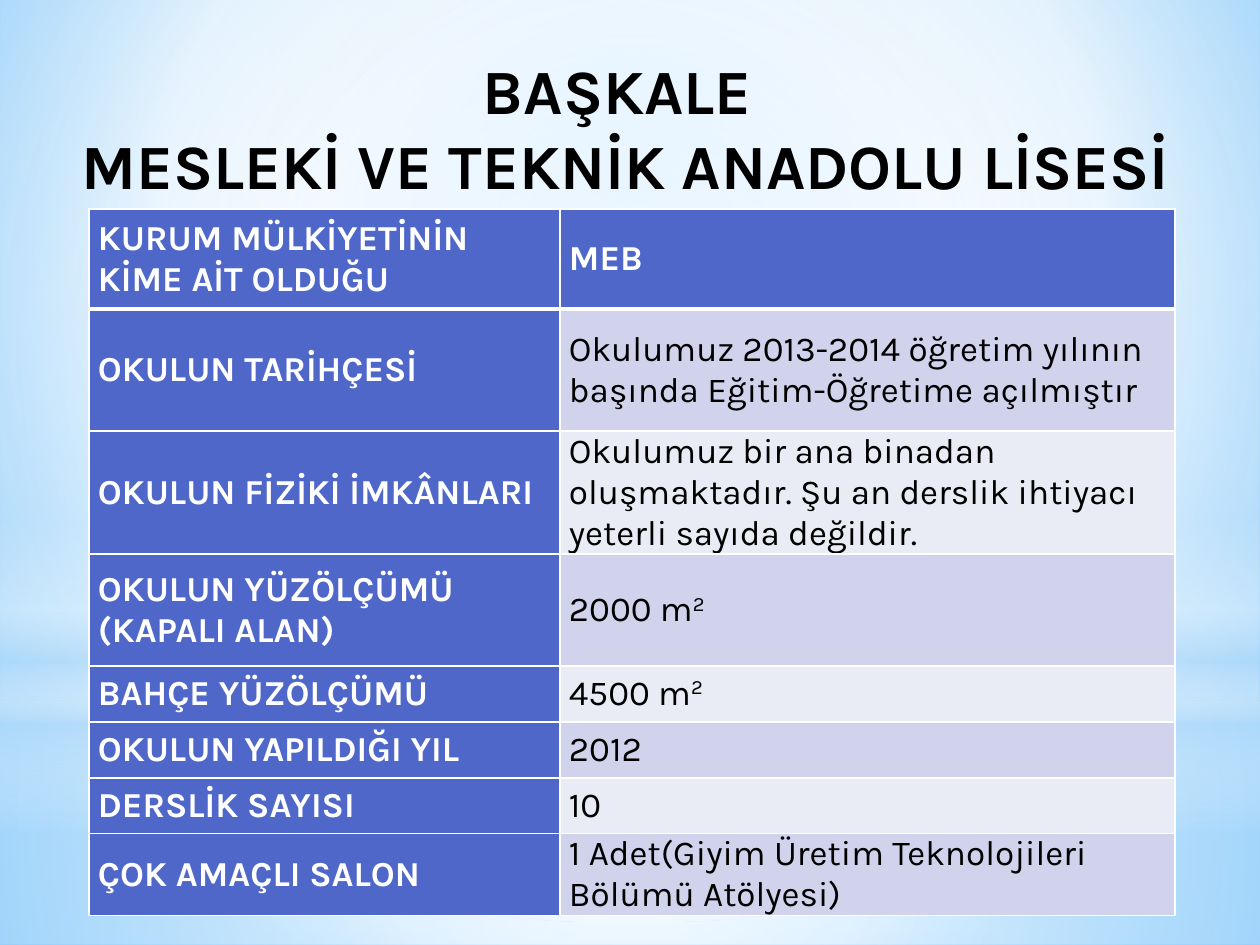
from lxml import etree
from pptx import Presentation
from pptx.dml.color import RGBColor
from pptx.enum.shapes import MSO_SHAPE
from pptx.enum.text import MSO_ANCHOR, PP_ALIGN
from pptx.oxml.ns import qn
from pptx.util import Emu, Pt

RECT, OVAL = MSO_SHAPE.RECTANGLE, MSO_SHAPE.OVAL
TOP, MIDDLE = MSO_ANCHOR.TOP, MSO_ANCHOR.MIDDLE
CENTER, LEFT = PP_ALIGN.CENTER, PP_ALIGN.LEFT
PX = 914400 // 126
FONT = "Karla"
COLORS = {
    "white": "FFFFFF", "black": "000000", "accent": "4E67C8",
    "band1": "D0D3EB", "band2": "E9EBF5",
    "sky": "9ED5FF", "deep": "5BB9FF", "mist": "B4DCFA",
}

# Content
TITLE = ["BAŞKALE ", "MESLEKİ VE TEKNİK ANADOLU LİSESİ"]
# (label, value, superscript, row height)
ROWS = [
    ("KURUM MÜLKİYETİNİN KİME AİT OLDUĞU", "MEB", "", 100),
    ("OKULUN TARİHÇESİ", "Okulumuz 2013-2014 öğretim yılının başında "
     "Eğitim-Öğretime açılmıştır", "", 122),
    ("OKULUN FİZİKİ İMKÂNLARI", "Okulumuz bir ana binadan oluşmaktadır. "
     "Şu an derslik ihtiyacı yeterli sayıda değildir.", "", 123),
    ("OKULUN YÜZÖLÇÜMÜ (KAPALI ALAN)", "2000 m", "2", 112),
    ("BAHÇE YÜZÖLÇÜMÜ", "4500 m", "2", 56),
    ("OKULUN YAPILDIĞI YIL", "2012", "", 56),
    ("DERSLİK SAYISI", "10", "", 56),
    ("ÇOK AMAÇLI SALON",
     "1 Adet(Giyim Üretim Teknolojileri Bölümü Atölyesi)", "", 82),
]
COLS = [471, 615]
TABLE_X, TABLE_Y = 89, 209

# Gradients: stops are (position %, colour, opacity %)
MIDPOINT = (50, 50, 50, 50)
BACKDROP = [(0, "sky", 100), (60, "white", 100), (100, "deep", 100)]
# (shape, box, stops, focus rectangle or None for top to bottom)
LAYERS = [
    (RECT, (0, 703, 1260, 242),
     [(0, "white", 91), (37, "white", 76), (100, "mist", 79)], MIDPOINT),
    (RECT, (0, 0, 1260, 703),
     [(0, "white", 89), (48, "white", 62), (100, "mist", 79)], MIDPOINT),
    (RECT, (0, 519, 1260, 315),
     [(0, "white", 0), (29, "white", 30), (45, "mist", 40),
      (55, "white", 26), (65, "mist", 60), (100, "white", 0)], None),
    (OVAL, (0, 220, 1260, 703),
     [(0, "white", 100), (56, "white", 0)], MIDPOINT),
]


def px(*values):
    return [Emu(v * PX) for v in values]


def rgb(name):
    return RGBColor.from_string(COLORS[name])


def add_gradient(fill, root, stops, focus):
    fill.gradient()
    grad = root.find(".//" + qn("a:gradFill"))
    grad.clear()
    grad.set("rotWithShape", "1")
    stop_list = etree.SubElement(grad, qn("a:gsLst"))
    for pos, color, opacity in stops:
        stop = etree.SubElement(stop_list, qn("a:gs"), pos=str(pos * 1000))
        clr = etree.SubElement(stop, qn("a:srgbClr"), val=COLORS[color])
        if opacity < 100:
            etree.SubElement(clr, qn("a:alpha"), val=str(opacity * 1000))
    if focus:
        shade = etree.SubElement(grad, qn("a:path"), path="circle")
        sides = {k: str(v * 1000) for k, v in zip("ltrb", focus)}
        etree.SubElement(shade, qn("a:fillToRect"), **sides)
    else:
        etree.SubElement(grad, qn("a:lin"), ang="5400000", scaled="0")


def add_text(p, text, size=20, color="black", bold=False, align=LEFT, base=0):
    p.alignment = align
    r = p.add_run()
    r.text = text
    r.font.name, r.font.size, r.font.bold = FONT, Pt(size), bold
    r.font.color.rgb = rgb(color)
    if base:
        r.font._element.set("baseline", str(base * 1000))


def add_borders(cell, top=1, bottom=1):
    tc_pr = cell._tc.get_or_add_tcPr()
    widths = {"lnL": 1, "lnR": 1, "lnT": top, "lnB": bottom}
    for i, (tag, width) in enumerate(widths.items()):
        ln = etree.Element(qn("a:" + tag), w=str(Pt(width)))
        fill = etree.SubElement(ln, qn("a:solidFill"))
        etree.SubElement(fill, qn("a:srgbClr"), val=COLORS["white"])
        tc_pr.insert(i, ln)


prs = Presentation()
prs.slide_width, prs.slide_height = px(1260, 945)
s = prs.slides.add_slide(prs.slide_layouts[5])

# Background and its soft light layers
add_gradient(s.background.fill, s._element, BACKDROP, (20, 10, 20, 60))
for kind, box, stops, focus in LAYERS:
    sp = s.shapes.add_shape(kind, *px(*box))
    sp.shadow.inherit = False
    sp.line.fill.background()
    add_gradient(sp.fill, sp._element, stops, focus)

# Table
heights = [row[3] for row in ROWS]
table = s.shapes.add_table(
    len(ROWS), len(COLS), *px(TABLE_X, TABLE_Y, sum(COLS), sum(heights))).table
for col, width in zip(table.columns, COLS):
    col.width = Emu(width * PX)
for i, (label, value, sup, height) in enumerate(ROWS):
    table.rows[i].height = Emu(height * PX)
    for j, text in enumerate((label, value)):
        cell = table.cell(i, j)
        head = i == 0 or j == 0
        cell.fill.solid()
        cell.fill.fore_color.rgb = rgb(
            "accent" if head else "band1" if i % 2 else "band2")
        cell.vertical_anchor = MIDDLE
        cell.margin_left, cell.margin_right = px(9, 9)
        cell.margin_top = cell.margin_bottom = 0
        add_borders(cell, top=3 if i == 1 else 1, bottom=3 if i == 0 else 1)
        p = cell.text_frame.paragraphs[0]
        add_text(p, text, color="white" if head else "black", bold=head)
        if sup and j == 1:
            add_text(p, sup, base=30)

# Title, in front of the layers
title = s.shapes.title
title.left, title.top, title.width, title.height = px(15, 45, 1221, 165)
s.shapes._spTree.append(title._element)
tf = title.text_frame
tf.word_wrap = True
tf.vertical_anchor = TOP
for i, line in enumerate(TITLE):
    p = tf.add_paragraph() if i else tf.paragraphs[0]
    p.space_before = Pt(0)
    add_text(p, line, size=36, bold=True, align=CENTER)

prs.save("out.pptx")
